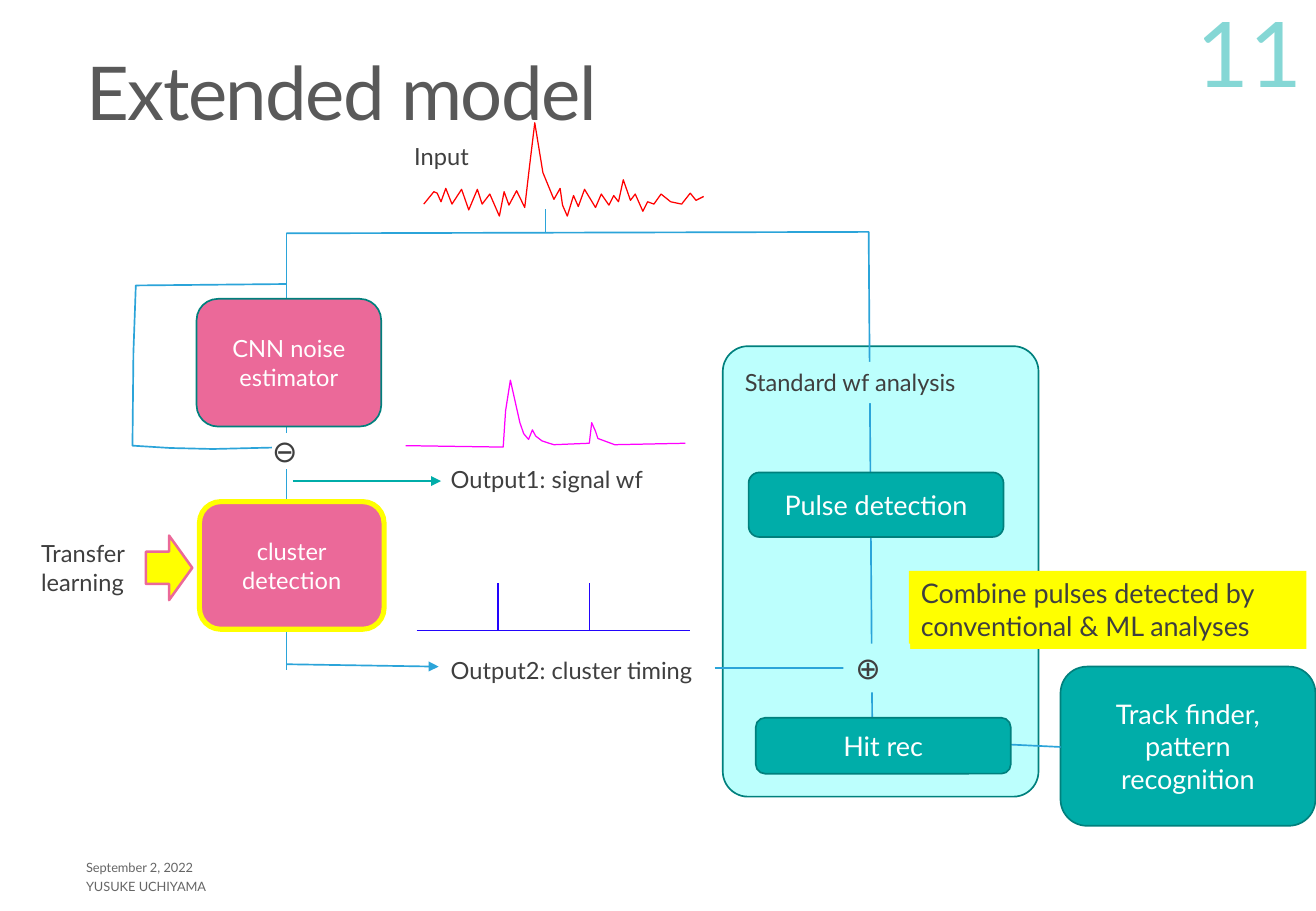
from dataclasses import dataclass

from lxml import etree
from pptx import Presentation
from pptx import util as u
from pptx.dml import color
from pptx.enum import shapes, text
from pptx.oxml import ns


@dataclass(frozen=True)
class Theme:
    font: str = "Lato"
    ink: str = "3F3F3F"
    heading: str = "595959"
    white: str = "FFFFFF"
    teal: str = "00ADA9"
    teal_edge: str = "00807D"
    panel: str = "BCFFFD"
    pink: str = "EB6999"
    yellow: str = "FFFF00"
    flow: str = "2BA4D9"
    noise: str = "FF0000"
    signal: str = "FF00FF"
    timing: str = "2204FC"
    title_size: float = 44
    number_size: float = 54
    symbol_size: float = 18
    large_size: float = 16
    body_size: float = 14
    footer_size: float = 7.6


T = Theme()
ROUND = shapes.MSO_SHAPE.ROUNDED_RECTANGLE
RECT = shapes.MSO_SHAPE.RECTANGLE
LEFT, CENTER, RIGHT = text.PP_ALIGN.LEFT, text.PP_ALIGN.CENTER, text.PP_ALIGN.RIGHT
TOP, MIDDLE, BOTTOM = (text.MSO_ANCHOR.TOP, text.MSO_ANCHOR.MIDDLE,
                       text.MSO_ANCHOR.BOTTOM)

# Waveform points in centimetres
INPUT_WAVE = [
    (8.86, 4.27), (9.07, 4.01), (9.14, 4.04), (9.22, 4.22), (9.32, 3.94),
    (9.45, 4.27), (9.65, 3.96), (9.8, 4.39), (9.98, 3.96), (10.08, 4.27),
    (10.24, 4.06), (10.44, 4.52), (10.54, 4.01), (10.64, 4.29), (10.8, 3.99),
    (10.97, 4.34), (11.07, 3.48), (11.18, 2.57), (11.35, 3.61), (11.58, 4.17),
    (11.71, 3.94), (11.76, 4.29), (11.86, 4.52), (11.99, 4.09), (12.09, 4.32),
    (12.22, 3.96), (12.45, 4.34), (12.57, 4.06), (12.73, 4.29), (12.83, 4.09),
    (12.93, 4.22), (13.03, 3.76), (13.18, 4.19), (13.28, 4.06), (13.44, 4.42),
    (13.54, 4.22), (13.67, 4.27), (13.82, 4.06), (14.02, 4.22), (14.25, 4.27),
    (14.43, 4.04), (14.55, 4.19), (14.71, 4.11)]
SIGNAL_WAVE = [
    (8.48, 9.32), (10.52, 9.35), (10.57, 8.59), (10.67, 7.95), (10.87, 8.84),
    (10.95, 9.07), (11.05, 9.19), (11.13, 8.99), (11.2, 9.12), (11.33, 9.22),
    (11.48, 9.27), (11.58, 9.3), (12.32, 9.27), (12.37, 8.84), (12.45, 9.02),
    (12.5, 9.17), (12.85, 9.3), (14.33, 9.27)]
BYPASS = [(5.99, 5.94), (2.84, 5.97), (2.79, 7.37), (2.77, 9.32), (3.56, 9.37),
          (4.45, 9.39), (6.12, 9.35)]
BRANCH = [(5.99, 4.88), (18.16, 4.85), (18.24, 15.9)]


def rgb(value):
    return color.RGBColor.from_string(value)


def apply(target, values):
    for name, value in values.items():
        setattr(target, name, value)


def paint(shape, fill=None, line=None, width=1.0):
    shape.shadow.inherit = False
    if fill:
        shape.fill.solid()
        shape.fill.fore_color.rgb = rgb(fill)
    else:
        shape.fill.background()
    if line:
        shape.line.color.rgb = rgb(line)
        shape.line.width = u.Pt(width)
    else:
        shape.line.fill.background()


def write(shape, wording, size=T.body_size, ink=T.ink, align=LEFT, anchor=TOP,
          wrap=True, alpha=None, highlight=None):
    frame = shape.text_frame
    frame.text = wording
    apply(frame, {"word_wrap": wrap, "vertical_anchor": anchor,
                  "auto_size": text.MSO_AUTO_SIZE.NONE})
    for paragraph in frame.paragraphs:
        paragraph.alignment = align
        for run in paragraph.runs:
            apply(run.font, {"name": T.font, "size": u.Pt(size)})
            run.font.color.rgb = rgb(ink)
            props = run.font._element
            if alpha:
                shade = props.find(".//" + ns.qn("a:srgbClr"))
                etree.SubElement(shade, ns.qn("a:alpha"), val=str(alpha * 1000))
            if highlight:
                mark = etree.Element(ns.qn("a:highlight"))
                etree.SubElement(mark, ns.qn("a:srgbClr"), val=highlight)
                props.find(ns.qn("a:solidFill")).addnext(mark)


def add_label(slide, at, wording, **style):
    label = slide.shapes.add_textbox(*map(u.Cm, at))
    write(label, wording, **style)


def add_block(slide, kind, at, fill, line=None, width=1.0, wording=None, **style):
    block = slide.shapes.add_shape(kind, *map(u.Cm, at))
    paint(block, fill, line, width)
    if wording:
        write(block, wording, **style)
    return block


def add_stage(slide, at, wording, fill=T.teal, line=T.teal_edge, width=1.0,
              size=T.large_size):
    add_block(slide, ROUND, at, fill, line, width, wording, size=size,
              ink=T.white, align=CENTER, anchor=MIDDLE)


def add_link(slide, start, end, ink=T.flow, width=1.0, arrow=False):
    link = slide.shapes.add_connector(shapes.MSO_CONNECTOR.STRAIGHT,
                                      *map(u.Cm, start + end))
    link.line.color.rgb = rgb(ink)
    link.line.width = u.Pt(width)
    if arrow:
        etree.SubElement(link.line._get_or_add_ln(), ns.qn("a:tailEnd"),
                         type="triangle")
    etree.SubElement(link._element.spPr, ns.qn("a:effectLst"))


def add_trace(slide, points, ink, width=1.0, fill=None):
    start, *rest = [(u.Cm(x), u.Cm(y)) for x, y in points]
    builder = slide.shapes.build_freeform(*start)
    builder.add_line_segments(rest, close=False)
    paint(builder.convert_to_shape(), fill, ink, width)


def add_title(slide, wording):
    title = slide.shapes.title
    apply(title, {"left": u.Cm(1.55), "top": u.Cm(0.91),
                  "width": u.Cm(24.31), "height": u.Cm(2.29)})
    write(title, wording, T.title_size, T.heading, anchor=MIDDLE)
    paragraph = title.text_frame.paragraphs[0]
    paragraph.line_spacing = 0.85
    paragraph.runs[0].font._element.set("spc", "-90")


def main():
    deck = Presentation()
    apply(deck, {"slide_width": u.Cm(27.51), "slide_height": u.Cm(19.05)})
    slide = deck.slides.add_slide(deck.slide_layouts[5])

    # Panel, title, footer and page number
    panel = add_block(slide, ROUND, (15.11, 7.24, 6.6, 9.42), T.panel, T.teal_edge)
    panel.adjustments[0] = 0.08
    add_title(slide, "Extended model")
    for top, wording in ((17.81, "September 2, 2022"), (18.21, "YUSUKE UCHIYAMA")):
        add_label(slide, (1.55, top, 10, 0.64), wording, size=T.footer_size,
                  anchor=MIDDLE, alpha=80)
    add_label(slide, (24.46, 0.05, 3.02, 2.29), "11", size=T.number_size,
              ink=T.teal, align=RIGHT, anchor=BOTTOM, alpha=47)

    # Outputs of the two networks
    add_link(slide, (6.12, 10.06), (9.22, 10.06), T.teal, 0.75, arrow=True)
    add_link(slide, (5.99, 13.89), (9.17, 13.94), arrow=True)
    add_link(slide, (14.94, 13.97), (18.21, 13.97), arrow=True)
    add_label(slide, (9.17, 9.6, 4.9, 0.86), "Output1: signal wf")
    add_label(slide, (9.17, 13.59, 6.25, 0.86), "Output2: cluster timing")

    # Transfer learning
    add_label(slide, (0.61, 11.15, 3.73, 1.45), "Transfer\nlearning")
    add_block(slide, shapes.MSO_SHAPE.RIGHT_ARROW, (3.05, 11.2, 0.97, 1.35),
              T.yellow, T.pink, 1.5)

    add_stage(slide, (22.17, 13.94, 5.33, 3.33), "Track finder,\vpattern recognition")

    # Waveforms
    add_label(slide, (8.41, 2.84, 1.75, 0.86), "Input", wrap=False)
    add_trace(slide, INPUT_WAVE, T.noise, 0.75, T.white)
    add_trace(slide, SIGNAL_WAVE, T.signal, 0.75, T.white)
    add_link(slide, (8.71, 13.18), (14.43, 13.18), T.timing, 0.75)
    for pulse in (10.41, 12.32):
        add_link(slide, (pulse, 13.18), (pulse, 12.19), T.timing)

    # Network branch
    add_link(slide, (5.99, 4.88), (5.99, 14))
    add_trace(slide, BYPASS, T.flow)
    add_link(slide, (11.4, 4.85), (11.4, 4.37))
    add_stage(slide, (4.17, 10.49, 3.86, 2.67), "cluster\ndetection",
              T.pink, T.yellow, 3, T.body_size)
    add_stage(slide, (4.11, 6.25, 3.86, 2.67), "CNN noise estimator",
              T.pink, size=T.body_size)
    add_label(slide, (5.44, 8.92, 1.4, 1.02), "⊖", size=T.symbol_size,
              highlight=T.white)

    # Standard analysis branch
    add_link(slide, (21.13, 15.57), (22.17, 15.62))
    add_block(slide, RECT, (19, 11.94, 8.31, 1.63), T.yellow, size=T.large_size,
              wording="Combine pulses detected by conventional & ML analyses")
    add_trace(slide, BRANCH, T.flow)
    add_block(slide, RECT, (17.63, 13.46, 1.4, 1.02), T.panel, wording="⊕",
              size=T.symbol_size)
    add_stage(slide, (15.65, 9.88, 5.33, 1.35), "Pulse detection")
    add_stage(slide, (15.8, 15.01, 5.33, 1.17), "Hit rec")
    add_block(slide, RECT, (15.32, 7.57, 6.12, 0.86), T.panel,
              wording="Standard wf analysis")

    deck.save("out.pptx")


if __name__ == "__main__":
    main()
